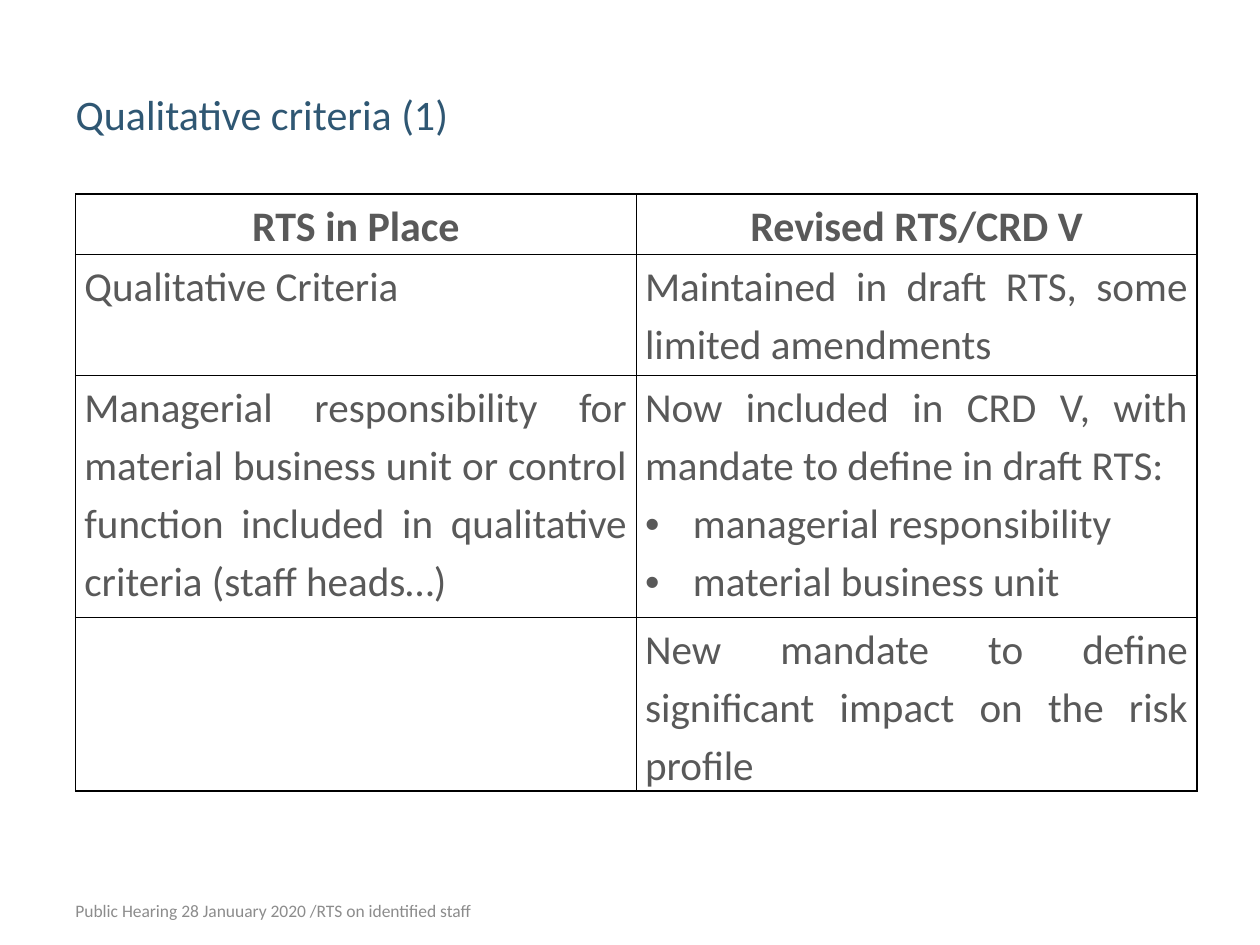
import pptx
import pptx.dml.color
import pptx.enum.text
import pptx.oxml
import pptx.oxml.ns
import pptx.util
from pptx.util import Inches

FONT = "Calibri"
ALIGN = pptx.enum.text.PP_ALIGN
ANCHOR = pptx.enum.text.MSO_ANCHOR
BULLET = "• "

HEADERS = ["RTS in Place", "Revised RTS/CRD V"]
BODY_ROWS = [
    [["Qualitative Criteria"],
     ["Maintained in draft RTS, some limited amendments"]],
    [["Managerial responsibility for material business unit or control "
      "function included in qualitative criteria (staff heads…)"],
     ["Now included in CRD V, with mandate to define in draft RTS:",
      BULLET + "managerial responsibility",
      BULLET + "material business unit"]],
    [[], ["New mandate to define significant impact on the risk profile"]],
]
ROW_HEIGHTS = [0.48, 0.96, 1.92, 1.38]


def color(value):
    return pptx.dml.color.RGBColor.from_string(value)


def add_run(paragraph, text, size, hex_color, bold=False):
    run = paragraph.add_run()
    run.text = text
    run.font.name = FONT
    run.font.size = pptx.util.Pt(size)
    run.font.bold = bold
    run.font.color.rgb = color(hex_color)


def add_bullet(paragraph):
    properties = paragraph._p.get_or_add_pPr()
    properties.set("marL", str(Inches(0.38)))
    properties.set("indent", str(Inches(-0.38)))
    for tag, attribute in (("buFont", 'typeface="Arial"'), ("buChar", 'char="•"')):
        properties.append(pptx.oxml.parse_xml(
            f'<a:{tag} {pptx.oxml.ns.nsdecls("a")} {attribute}/>'))


def set_borders(cell, hex_color="000000", width=1):
    properties = cell._tc.get_or_add_tcPr()
    for position, side in enumerate(("lnL", "lnR", "lnT", "lnB")):
        properties.insert(position, pptx.oxml.parse_xml(
            f'<a:{side} {pptx.oxml.ns.nsdecls("a")} w="{pptx.util.Pt(width)}">'
            f'<a:solidFill><a:srgbClr val="{hex_color}"/></a:solidFill></a:{side}>'))


def fill_cell(cell, texts, size, alignment, bold):
    cell.margin_left = cell.margin_right = Inches(0.07)
    cell.margin_top = cell.margin_bottom = 0
    cell.fill.background()
    set_borders(cell)
    for index, text in enumerate(texts):
        frame = cell.text_frame
        paragraph = frame.add_paragraph() if index else frame.paragraphs[0]
        paragraph.alignment = alignment
        paragraph.line_spacing = 1.15
        if text.startswith(BULLET):
            add_bullet(paragraph)
        add_run(paragraph, text.removeprefix(BULLET), size, "595959", bold)


def add_title(slide, left, top, width, height):
    title = slide.shapes.title
    title.left, title.top, title.width, title.height = left, top, width, height
    frame = title.text_frame
    frame.vertical_anchor = ANCHOR.TOP
    frame.margin_top = Inches(0.06)
    frame.paragraphs[0].alignment = ALIGN.LEFT
    add_run(frame.paragraphs[0], "Qualitative criteria (1)", 24, "2F5773")


def add_criteria_table(slide, left, top, width, height):
    table = slide.shapes.add_table(
        len(ROW_HEIGHTS), len(HEADERS), left, top, width, height).table
    table.first_row = table.horz_banding = False
    for row, row_height in zip(table.rows, ROW_HEIGHTS):
        row.height = Inches(row_height)
    for column, header in enumerate(HEADERS):
        fill_cell(table.cell(0, column), [header], 24, ALIGN.CENTER, True)
    for row, cells in enumerate(BODY_ROWS, start=1):
        for column, texts in enumerate(cells):
            fill_cell(table.cell(row, column), texts, 23.5, ALIGN.JUSTIFY, False)


def add_footer(slide, left, top, width, height):
    frame = slide.shapes.add_textbox(left, top, width, height).text_frame
    frame.word_wrap = True
    frame.vertical_anchor = ANCHOR.MIDDLE
    add_run(frame.paragraphs[0],
            "Public Hearing 28 Januuary 2020 /RTS on identified staff", 10, "8C8C8C")


def main():
    presentation = pptx.Presentation()
    presentation.slide_width = Inches(10)
    presentation.slide_height = Inches(7.5)
    slide = presentation.slides.add_slide(presentation.slide_layouts[5])
    add_title(slide, Inches(0.5), Inches(0.64), Inches(7.29), Inches(0.61))
    add_criteria_table(slide, Inches(0.6), Inches(1.54), Inches(8.9),
                       Inches(sum(ROW_HEIGHTS)))
    add_footer(slide, Inches(0.5), Inches(7.11), Inches(5.38), Inches(0.24))
    presentation.save("out.pptx")


if __name__ == "__main__":
    main()
